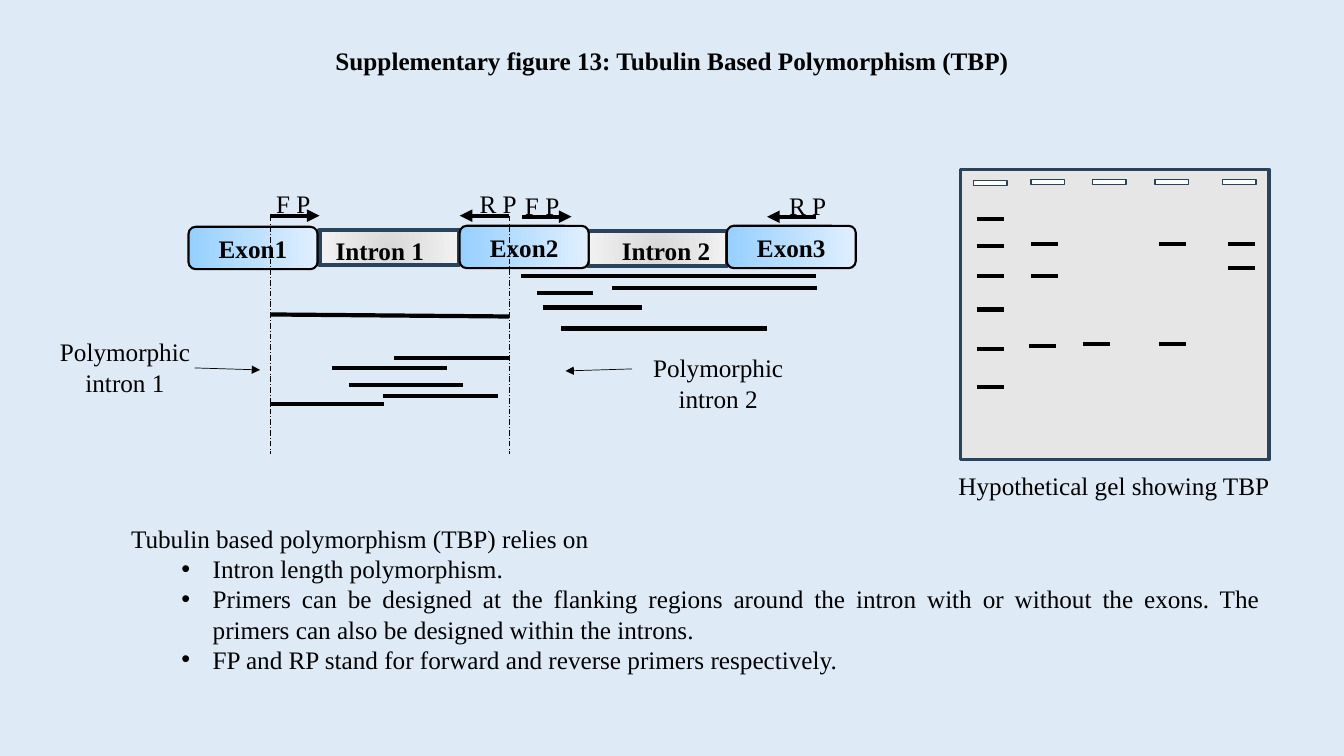
"""Build the Tubulin Based Polymorphism slide: gene map, hypothetical gel and notes."""
from dataclasses import dataclass

from lxml.etree import SubElement
from pptx import Presentation
from pptx.dml.color import RGBColor
from pptx.enum.dml import MSO_LINE as Dash
from pptx.enum.shapes import MSO_CONNECTOR as Link, MSO_SHAPE as Preset
from pptx.enum.text import MSO_ANCHOR as Anchor, MSO_AUTO_SIZE as AutoSize, PP_ALIGN as Align
from pptx.oxml.ns import qn
from pptx.util import Inches, Pt

COLOURS = {
    "background": "DEEBF7", "ink": "000000", "frame": "28445D",
    "gel": "E7E6E6", "well": "FFFFFF",
    "exon start": "96D0FF", "exon end": "E0EFFF",
    "intron centre": "D8D8D8", "intron edge": "F2F2F2",
}
FONT = "Times New Roman"
WIDTH, HEIGHT = Inches(13.333), Inches(7.5)
COL, ROW = WIDTH / 133.33, HEIGHT / 75


@dataclass(frozen=True)
class Area:
    left: float
    top: float
    cols: float
    rows: float

    def emu(self) -> tuple[int, int, int, int]:
        return (round(self.left * COL), round(self.top * ROW),
                round(self.cols * COL), round(self.rows * ROW))


@dataclass(frozen=True)
class Block:
    area: Area
    preset: Preset
    fill: tuple[str, ...]
    border: str
    weight: float
    caption: str = ""


@dataclass(frozen=True)
class Label:
    text: str
    area: Area
    align: Align = Align.LEFT
    bold: bool = False


@dataclass(frozen=True)
class Strand:
    x1: float
    y1: float
    x2: float
    y2: float
    weight: float = 3
    arrow: bool = False
    dashed: bool = False


def colour(name: str) -> RGBColor:
    return RGBColor.from_string(COLOURS[name])


def style(paragraph, align: Align, bold: bool = False) -> None:
    paragraph.alignment = align
    font = paragraph.font
    font.name, font.size, font.bold = FONT, Pt(18), bold
    font.color.rgb = colour("ink")


def place(shape, area: Area) -> None:
    shape.left, shape.top, shape.width, shape.height = area.emu()


def draw_block(slide, block: Block) -> None:
    shape = slide.shapes.add_shape(block.preset, *block.area.emu())
    shape.shadow.inherit = False
    shape.line.color.rgb = colour(block.border)
    shape.line.width = Pt(block.weight)
    if len(block.fill) == 1:
        shape.fill.solid()
        shape.fill.fore_color.rgb = colour(block.fill[0])
    else:
        shape.fill.gradient()
        shape.fill.gradient_angle = 0
        for stop, name in zip(shape.fill.gradient_stops, block.fill):
            stop.color.rgb = colour(name)
        if block.preset == Preset.RECTANGLE:
            make_radial(shape)
    if block.caption:
        frame = shape.text_frame
        frame.text = block.caption
        frame.vertical_anchor = Anchor.MIDDLE
        style(frame.paragraphs[0], Align.CENTER, True)


def make_radial(shape) -> None:
    gradient = shape.element.spPr.find(qn("a:gradFill"))
    gradient.remove(gradient.find(qn("a:lin")))
    circle = SubElement(gradient, qn("a:path"), {"path": "circle"})
    SubElement(circle, qn("a:fillToRect"), dict.fromkeys("ltrb", "50000"))


def draw_label(slide, label: Label) -> None:
    frame = slide.shapes.add_textbox(*label.area.emu()).text_frame
    frame.word_wrap = True
    frame.text = label.text
    style(frame.paragraphs[0], label.align, label.bold)


def draw_strand(slide, strand: Strand) -> None:
    line = slide.shapes.add_connector(
        Link.STRAIGHT, round(strand.x1 * COL), round(strand.y1 * ROW),
        round(strand.x2 * COL), round(strand.y2 * ROW))
    line.line.color.rgb = colour("ink")
    line.line.width = Pt(strand.weight)
    if strand.dashed:
        line.line.dash_style = Dash.LONG_DASH_DOT
    properties = line.element.spPr
    if strand.arrow:
        SubElement(properties.find(qn("a:ln")), qn("a:tailEnd"), {"type": "triangle"})
    SubElement(properties, qn("a:effectLst"))


def write_notes(body, intro: str, points: list[str]) -> None:
    place(body, Area(12, 51.4, 114, 16.2))
    frame = body.text_frame
    frame.auto_size = AutoSize.NONE
    frame.text = "\n".join([intro, *points])
    for index, paragraph in enumerate(frame.paragraphs):
        style(paragraph, Align.JUSTIFY)
        paragraph.space_before = Pt(0)
        props = paragraph._p.get_or_add_pPr()
        if index:
            paragraph.level = 1
            props.set("marL", str(Inches(0.81)))
            props.set("indent", str(Inches(-0.31)))
            SubElement(props, qn("a:buFont"), {"typeface": "Arial"})
            SubElement(props, qn("a:buChar"), {"char": "•"})
            props.append(props.find(qn("a:defRPr")))
        else:
            props.set("marL", "0")
            props.set("indent", "0")
            SubElement(props, qn("a:buNone"))
            props.append(props.find(qn("a:defRPr")))


INTRONS = [Block(Area(left, top, 13.8, 3.5), Preset.RECTANGLE,
                 ("intron centre", "intron edge"), "frame", 3)
           for left, top in ((31.7, 22.8), (58.3, 22.9))]
EXONS = [Block(Area(left, top, 12.8, 4.2), Preset.ROUNDED_RECTANGLE,
               ("exon start", "exon end"), "ink", 1.5, f"Exon{number}")
         for number, (left, top) in enumerate(((18.7, 22.5), (45.6, 22.4), (72.1, 22.4)), 1)]
GEL = Block(Area(95.3, 16.8, 30.6, 28.8), Preset.RECTANGLE, ("gel",), "frame", 2.25)
WELLS = [Block(Area(left, top, 3.3, 0.5), Preset.RECTANGLE, ("well",), "frame", 1)
         for left, top in ((96.6, 17.9), (102.3, 17.8), (108.4, 17.8),
                           (114.6, 17.8), (121.3, 17.8))]

PRIMERS = [Strand(x1, y, x2, y, arrow=True) for x1, x2, y in (
    (26.8, 31.7, 21.4), (50.5, 45.6, 21.4), (81, 76.1, 21.5), (51.8, 56.7, 21.5))]
POINTERS = [Strand(19.3, 36.5, 25.8, 36.7, 0.5, arrow=True),
            Strand(62.7, 36.6, 56.1, 36.8, 0.5, arrow=True)]
BOUNDARIES = [Strand(x, 21.4, x, 45, 0.5, dashed=True) for x in (26.8, 50.5)]
FRAGMENTS = [Strand(26.8, 31.2, 50.5, 31.4)] + [Strand(x1, y, x2, y) for x1, x2, y in (
    (39.1, 50.5, 35.5), (32.9, 44.3, 36.5), (34.6, 45.9, 38.2), (38, 49.4, 39.3),
    (26.8, 38.1, 40.1), (51.7, 81, 27.4), (60.7, 81.1, 28.6), (53.9, 63.7, 30.5),
    (55.7, 76.1, 32.6), (53.3, 58.8, 29.1))]
LANES = [
    (96.9, (21.7, 24.4, 27.4, 30.7, 34.6, 38.4)),
    (102.3, (24.2, 27.4)), (102.1, (34.3,)),
    (107.4, (34.1,)), (114.95, (24.2, 34.1)), (121.8, (24.2, 26.6)),
]
BANDS = [Strand(left, y, left + 2.7, y) for left, rows in LANES for y in rows]

LABELS = [Label(text, Area(left, top, 7.3, 4)) for text, left, top in (
    ("F P", 26.4, 18.2), ("R P", 46.6, 18.2), ("R P", 77.3, 18.4), ("F P", 51.1, 18.4))]
LABELS += [
    Label("Intron 1", Area(32.3, 22.9, 13.2, 4), bold=True),
    Label("Intron 2", Area(60.7, 22.9, 13.2, 4), bold=True),
    Label("Polymorphic intron 1", Area(4.5, 32.9, 15.8, 7.1), Align.CENTER),
    Label("Polymorphic intron 2", Area(62.9, 34.5, 16.7, 7.1), Align.CENTER),
    Label("Hypothetical gel showing TBP", Area(94.1, 46.2, 33.1, 4)),
]
INTRO = "Tubulin based polymorphism (TBP) relies on"
POINTS = [
    "Intron length polymorphism.",
    "Primers can be designed at the flanking regions around the intron with or without "
    "the exons. The primers can also be designed within the introns.",
    "FP and RP stand for forward and reverse primers respectively.",
]


def main() -> None:
    deck = Presentation()
    deck.slide_width, deck.slide_height = WIDTH, HEIGHT
    slide = deck.slides.add_slide(deck.slide_layouts[1])
    slide.background.fill.solid()
    slide.background.fill.fore_color.rgb = colour("background")
    heading = slide.shapes.title
    place(heading, Area(0, 4, 133.33, 4))
    heading.text_frame.text = "Supplementary figure 13: Tubulin Based Polymorphism (TBP)"
    style(heading.text_frame.paragraphs[0], Align.CENTER, True)
    write_notes(slide.placeholders[1], INTRO, POINTS)
    for block in [*INTRONS, *EXONS, GEL, *WELLS]:
        draw_block(slide, block)
    for strand in PRIMERS + POINTERS + BOUNDARIES + FRAGMENTS + BANDS:
        draw_strand(slide, strand)
    for label in LABELS:
        draw_label(slide, label)
    deck.save("out.pptx")


if __name__ == "__main__":
    main()
